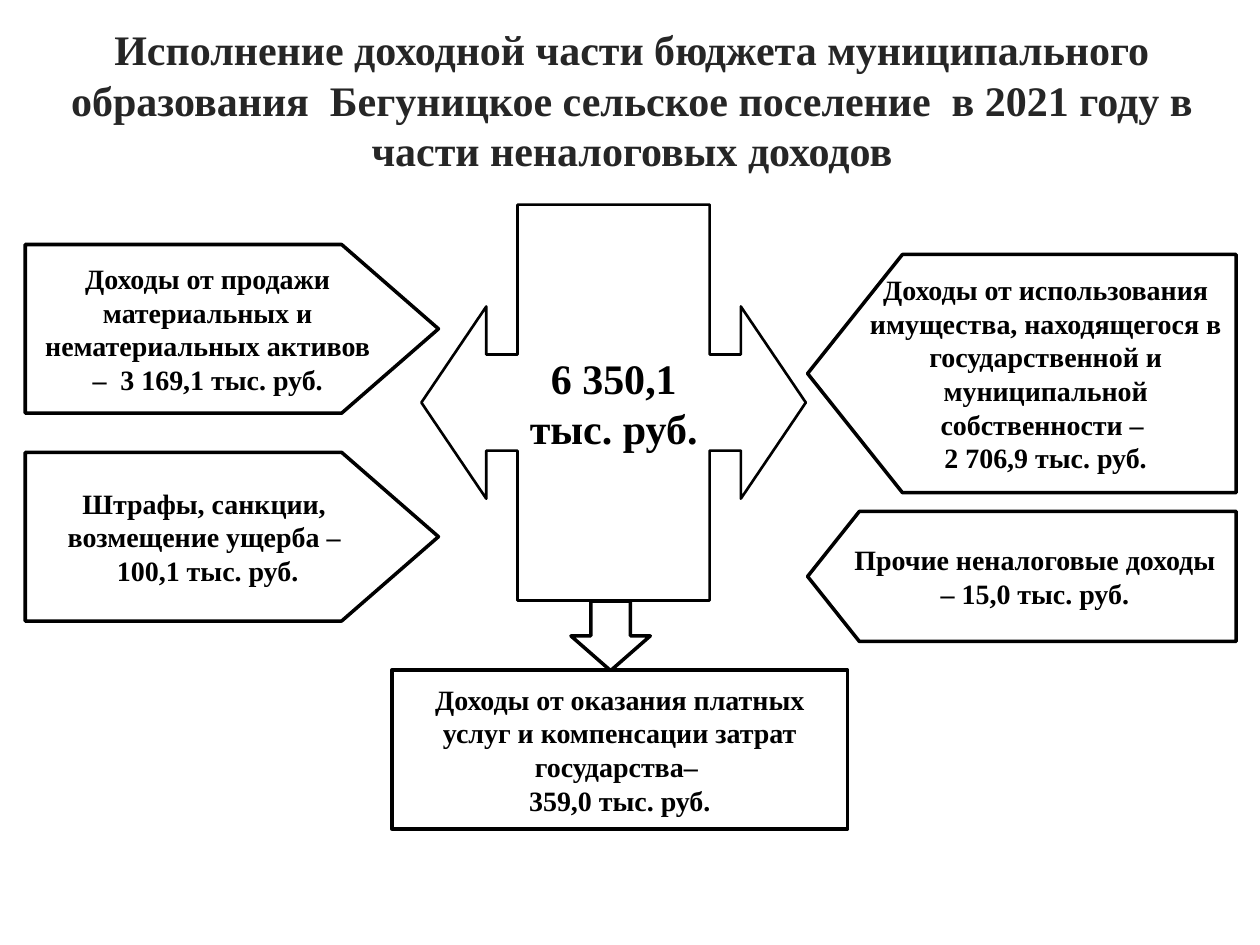
from pptx import Presentation
from pptx.dml.color import RGBColor
from pptx.enum.shapes import MSO_SHAPE
from pptx.enum.text import MSO_ANCHOR, PP_ALIGN
from pptx.util import Cm, Pt

PENTAGON = MSO_SHAPE.PENTAGON
CALLOUT = MSO_SHAPE.UP_DOWN_ARROW_CALLOUT
DOWN_ARROW = MSO_SHAPE.DOWN_ARROW
RECTANGLE = MSO_SHAPE.RECTANGLE
MIDDLE, BOTTOM = MSO_ANCHOR.MIDDLE, MSO_ANCHOR.BOTTOM
CENTER = PP_ALIGN.CENTER

BLACK, WHITE, DARK_GREY = "000000", "FFFFFF", "262626"
HEADLINE = (
    "Исполнение доходной части бюджета муниципального образования  "
    "Бегуницкое сельское поселение  в 2021 году в части неналоговых доходов"
)
LEFT_INCOMES = [
    (4.93, ["Доходы от продажи материальных и нематериальных активов –  3 169,1 тыс. руб."]),
    (9.12, ["Штрафы, санкции, ", "возмещение ущерба – ", "100,1 тыс. руб."]),
]
RIGHT_INCOMES = [
    (5.13, 4.8, [
        "Доходы от использования имущества, находящегося в государственной "
        "и муниципальной собственности – ",
        "2 706,9 тыс. руб.",
    ]),
    (10.31, 2.62, ["Прочие неналоговые доходы – 15,0 тыс. руб."]),
]
SERVICE_INCOME = [
    "Доходы от оказания платных услуг и компенсации затрат государства– ",
    "359,0 тыс. руб.",
]


def color(hex_value):
    """Turn a hex string into a colour."""
    return RGBColor.from_string(hex_value)


def apply_format(target, values):
    """Set each attribute named in the dict."""
    for attribute, value in values.items():
        setattr(target, attribute, value)


def write_lines(frame, lines, size, hex_value=BLACK, **frame_format):
    """Write centred bold paragraphs into a text frame."""
    apply_format(frame, {"word_wrap": True, "vertical_anchor": MIDDLE, **frame_format})
    for number, line in enumerate(lines):
        paragraph = frame.add_paragraph() if number else frame.paragraphs[0]
        paragraph.alignment = CENTER
        run = paragraph.add_run()
        run.text = line
        apply_format(run.font, {"name": "Times New Roman", "size": Pt(size), "bold": True})
        run.font.color.rgb = color(hex_value)


def add_headline(slide):
    """Add the heading above the diagram."""
    box = slide.shapes.add_textbox(Cm(0.69), Cm(0.41), Cm(24.1), Cm(3.12))
    margins = {"margin_left": 0, "margin_right": 0, "margin_top": Cm(0.13), "margin_bottom": 0}
    write_lines(box.text_frame, [HEADLINE], 24, DARK_GREY, vertical_anchor=BOTTOM, **margins)


def add_outlined(slide, preset, bounds, adjustments=(), rotation=0, line_width=2):
    """Add a white shape with a black outline."""
    shape = slide.shapes.add_shape(preset, *map(Cm, bounds))
    shape.shadow.inherit = False
    shape.rotation = rotation
    for index, value in enumerate(adjustments):
        shape.adjustments[index] = value
    shape.fill.solid()
    shape.fill.fore_color.rgb = color(WHITE)
    shape.line.color.rgb = color(BLACK)
    shape.line.width = Pt(line_width)
    return shape


def add_total(slide):
    """Add the central two-way callout with the total income."""
    total = add_outlined(slide, CALLOUT, (8.38, 4.24, 7.98, 7.75),
                         (0.25, 0.25, 0.169, 0.5), 270, 1.5)
    write_lines(total.text_frame, ["6 350,1", "тыс. руб."], 24, word_wrap=False)
    total.text_frame._txBody.bodyPr.set("vert", "eaVert")


def add_left_income(slide, top, lines):
    """Add an income pentagon pointing right."""
    income = add_outlined(slide, PENTAGON, (0.51, top, 8.33, 3.4), (0.574,))
    write_lines(income.text_frame, lines, 16)


def add_right_income(slide, top, height, lines):
    """Add an income pentagon pointing left with upright text."""
    income = add_outlined(slide, PENTAGON, (16.28, top, 8.64, height), (0.398,), 180)
    write_lines(income.text_frame, lines, 16)
    income.text_frame._txBody.bodyPr.set("rot", "10800000")


def add_service_income(slide):
    """Add the bottom income box and the arrow leading to it."""
    income = add_outlined(slide, RECTANGLE, (7.9, 13.51, 9.19, 3.2))
    write_lines(income.text_frame, SERVICE_INCOME, 16)
    add_outlined(slide, DOWN_ARROW, (11.51, 12.12, 1.6, 1.4))


def main():
    """Build and save the slide."""
    presentation = Presentation()
    apply_format(presentation, {"slide_width": Cm(25.4), "slide_height": Cm(19.05)})
    slide = presentation.slides.add_slide(presentation.slide_layouts[6])
    add_headline(slide)
    add_total(slide)
    for income in LEFT_INCOMES:
        add_left_income(slide, *income)
    for income in RIGHT_INCOMES:
        add_right_income(slide, *income)
    add_service_income(slide)
    presentation.save("out.pptx")


if __name__ == "__main__":
    main()
